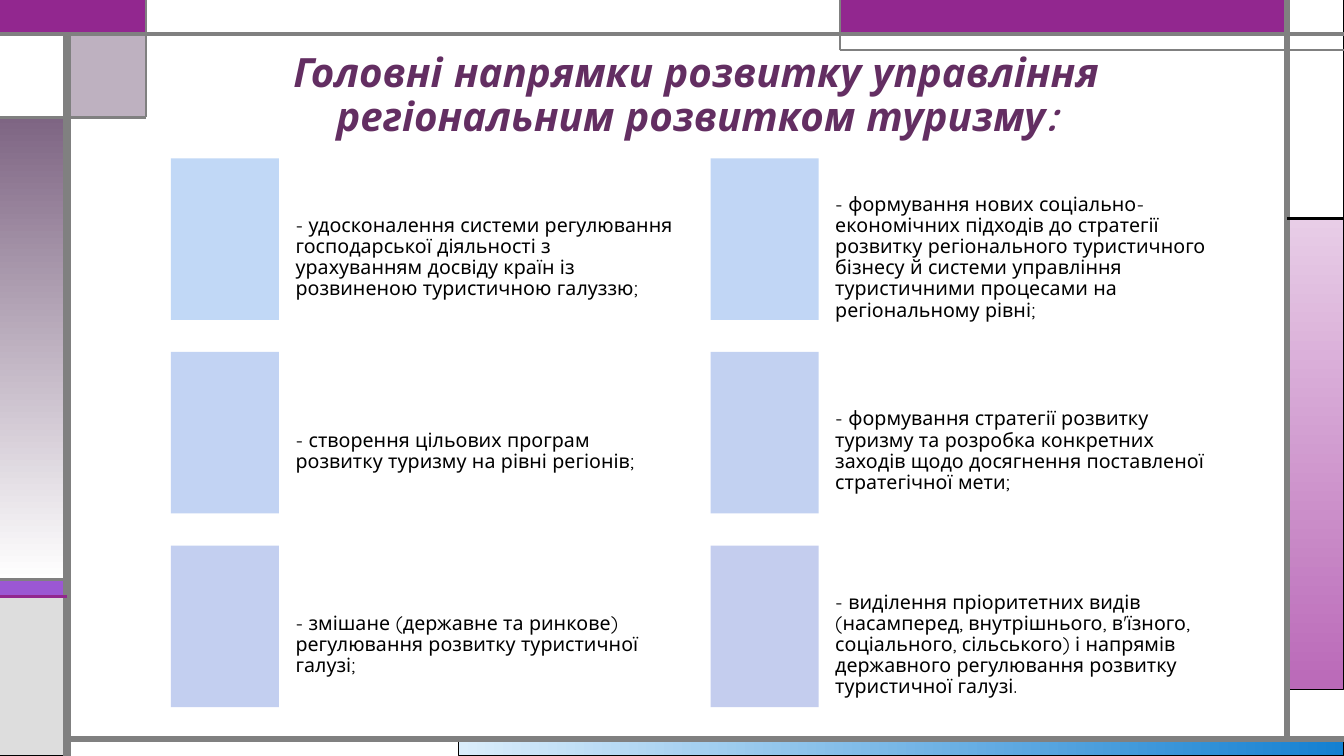
from lxml.etree import SubElement
from pptx import Presentation
from pptx.dml.color import RGBColor
from pptx.enum.shapes import MSO_CONNECTOR, MSO_SHAPE
from pptx.enum.text import MSO_ANCHOR, PP_ALIGN
from pptx.oxml.ns import qn
from pptx.util import Cm, Pt

# Content
TITLE = "Головні напрямки розвитку управління регіональним розвитком туризму:"
DIRECTIONS = [
    ("- удосконалення системи регулювання господарської діяльності з "
     "урахуванням досвіду країн із розвиненою туристичною галуззю;", RGBColor(0xC1, 0xD8, 0xF6)),
    ("- формування нових соціально-економічних підходів до стратегії розвитку "
     "регіонального туристичного бізнесу й системи управління туристичними "
     "процесами на регіональному рівні;", RGBColor(0xC1, 0xD6, 0xF5)),
    ("- створення цільових програм розвитку туризму на рівні регіонів;",
     RGBColor(0xC2, 0xD3, 0xF3)),
    ("- формування стратегії розвитку туризму та розробка конкретних заходів "
     "щодо досягнення поставленої стратегічної мети;", RGBColor(0xC2, 0xD1, 0xF1)),
    ("- змішане (державне та ринкове) регулювання розвитку туристичної галузі;",
     RGBColor(0xC3, 0xCF, 0xF0)),
    ("- виділення пріоритетних видів (насамперед, внутрішнього, в'їзного, "
     "соціального, сільського) і напрямів державного регулювання розвитку "
     "туристичної галузі.", RGBColor(0xC4, 0xCD, 0xEE)),
]

FONT = "Quicksand"
BLACK = RGBColor(0, 0, 0)
WHITE = RGBColor(0xFF, 0xFF, 0xFF)
GRAY = RGBColor(0x80, 0x80, 0x80)
SILVER = RGBColor(0xDD, 0xDD, 0xDD)
PURPLE = RGBColor(0x92, 0x27, 0x8F)
VIOLET = RGBColor(0x9B, 0x57, 0xD3)
INDIGO = RGBColor(0x75, 0x5D, 0xD9)
MAUVE = RGBColor(0x7E, 0x65, 0x83)
PLUM = RGBColor(0x63, 0x2E, 0x62)
PALE_PINK, PINK = RGBColor(0xE8, 0xCD, 0xE7), RGBColor(0xBA, 0x69, 0xB8)
PALE_BLUE, BLUE = RGBColor(0xDA, 0xED, 0xFB), RGBColor(0x14, 0x80, 0xD1)

# Frame guides, cm
WIDTH, HEIGHT = 33.87, 19.05
LEFT_BAR, CORNER, TOP_RIGHT, RIGHT_BAR = 1.69, 3.67, 21.17, 32.44
TOP_BAR, TAB, CORNER_END, PINK_TOP = 0.85, 1.27, 2.96, 5.5
VIOLET_TOP, SILVER_TOP, PINK_END, BOTTOM_BAR = 14.61, 15.03, 17.37, 18.63

# left, top, right, bottom, fill (a pair is a gradient), gradient angle, line, line width
PANELS = [
    (11.56, BOTTOM_BAR, WIDTH, HEIGHT, (PALE_BLUE, BLUE), 0, BLACK, 0.75),
    (RIGHT_BAR, PINK_TOP, WIDTH, PINK_END, (PALE_PINK, PINK), 270, BLACK, 0.75),
    (0, VIOLET_TOP, LEFT_BAR, SILVER_TOP, VIOLET, 0, BLACK, 0.75),
    (0, SILVER_TOP, LEFT_BAR, HEIGHT, SILVER, 0, BLACK, 0.75),
    (RIGHT_BAR, 0, WIDTH, PINK_TOP, WHITE, 0, BLACK, 0.75),
    (TOP_RIGHT, 0, RIGHT_BAR, TOP_BAR, PURPLE, 0, INDIGO, 0.75),
    (LEFT_BAR, TOP_BAR, CORNER, CORNER_END, MAUVE, 0, BLACK, 0.75),
    (0, CORNER_END, LEFT_BAR, VIOLET_TOP, (MAUVE, WHITE), 270, BLACK, 0.75),
    (0, TOP_BAR, LEFT_BAR, CORNER_END, WHITE, 0, BLACK, 0.75),
    (0, 0, CORNER, TOP_BAR, PURPLE, 0, PURPLE, 1.5),
    (CORNER, 0, TOP_RIGHT, TOP_BAR, WHITE, 0, GRAY, 0.75),
]
CORNER_PANEL = 6  # half transparent

# from x, y, to x, y, colour, width
RULES = [
    (LEFT_BAR, HEIGHT, LEFT_BAR, TOP_BAR, GRAY, 6),
    (LEFT_BAR, BOTTOM_BAR, WIDTH, BOTTOM_BAR, GRAY, 4.5),
    (RIGHT_BAR, BOTTOM_BAR, RIGHT_BAR, 0, GRAY, 4.5),
    (0, TOP_BAR, WIDTH, TOP_BAR, GRAY, 3),
    (WIDTH, TAB, TOP_RIGHT, TAB, GRAY, 1.5),
    (TOP_RIGHT, TAB, TOP_RIGHT, 0, GRAY, 1.5),
    (RIGHT_BAR, PINK_TOP, WIDTH, PINK_TOP, BLACK, 2.25),
    (CORNER, 0, CORNER, CORNER_END, GRAY, 1.5),
    (CORNER, CORNER_END, 0, CORNER_END, GRAY, 2.25),
    (LEFT_BAR, VIOLET_TOP, 0, VIOLET_TOP, GRAY, 2.25),
    (LEFT_BAR, SILVER_TOP, 0, SILVER_TOP, PURPLE, 2.25),
]

deck = Presentation()
deck.slide_width, deck.slide_height = Cm(WIDTH), Cm(HEIGHT)
slide = deck.slides.add_slide(deck.slide_layouts[6])


def add_panel(left, top, right, bottom, fill, angle=0, line=None, line_width=0.75):
    panel = slide.shapes.add_shape(MSO_SHAPE.RECTANGLE, Cm(left), Cm(top),
                                   Cm(right - left), Cm(bottom - top))
    panel.shadow.inherit = False
    if isinstance(fill, RGBColor):
        panel.fill.solid()
        panel.fill.fore_color.rgb = fill
    else:
        panel.fill.gradient()
        panel.fill.gradient_angle = angle
        for stop, color in zip(panel.fill.gradient_stops, fill):
            stop.color.rgb = color
    if line is None:
        panel.line.fill.background()
    else:
        panel.line.color.rgb = line
        panel.line.width = Pt(line_width)
    return panel


def add_rule(x1, y1, x2, y2, color, width):
    rule = slide.shapes.add_connector(MSO_CONNECTOR.STRAIGHT, Cm(x1), Cm(y1), Cm(x2), Cm(y2))
    rule.line.color.rgb = color
    rule.line.width = Pt(width)
    SubElement(rule._element.spPr, qn("a:effectLst"))


def add_text(text, left, top, width, height, *, size, color, insets, anchor,
             align=PP_ALIGN.LEFT, bold=False, italic=False):
    frame = slide.shapes.add_textbox(Cm(left), Cm(top), Cm(width), Cm(height)).text_frame
    frame.word_wrap = True
    frame.vertical_anchor = anchor
    frame.margin_left, frame.margin_top, frame.margin_right, frame.margin_bottom = map(Cm, insets)
    paragraph = frame.paragraphs[0]
    paragraph.alignment = align
    paragraph.line_spacing = 0.9
    run = paragraph.add_run()
    run.text = text
    run.font.name, run.font.size = FONT, Pt(size)
    run.font.bold, run.font.italic = bold, italic
    run.font.color.rgb = color


# Decorative frame
panels = [add_panel(*panel) for panel in PANELS]
corner_color = panels[CORNER_PANEL]._element.spPr.find(qn("a:solidFill"))[0]
SubElement(corner_color, qn("a:alpha"), val="50000")
for rule in RULES:
    add_rule(*rule)

# Title
add_text(TITLE, 4.22, 1.12, 26.67, 2.54, size=28.8, color=PLUM, bold=True, italic=True,
         align=PP_ALIGN.CENTER, anchor=MSO_ANCHOR.BOTTOM, insets=(0.25, 0.13, 0.25, 0.13))

# Directions in two columns, each with a tile on its left
GRID_LEFT, GRID_TOP, COLUMN_STEP, ROW_STEP = 4.31, 3.99, 13.6, 4.88
TILE_WIDTH, TILE_HEIGHT = 2.72, 4.07
for index, (direction, tile_color) in enumerate(DIRECTIONS):
    row, column = divmod(index, 2)
    left, top = GRID_LEFT + column * COLUMN_STEP, GRID_TOP + row * ROW_STEP
    add_text(direction, left + 0.52, top + 0.56, 12.4, 3.89, size=14, color=BLACK,
             anchor=MSO_ANCHOR.MIDDLE, insets=(2.62, 0.15, 0.15, 0.15))
    add_panel(left, top, left + TILE_WIDTH, top + TILE_HEIGHT, tile_color)

deck.save("out.pptx")
